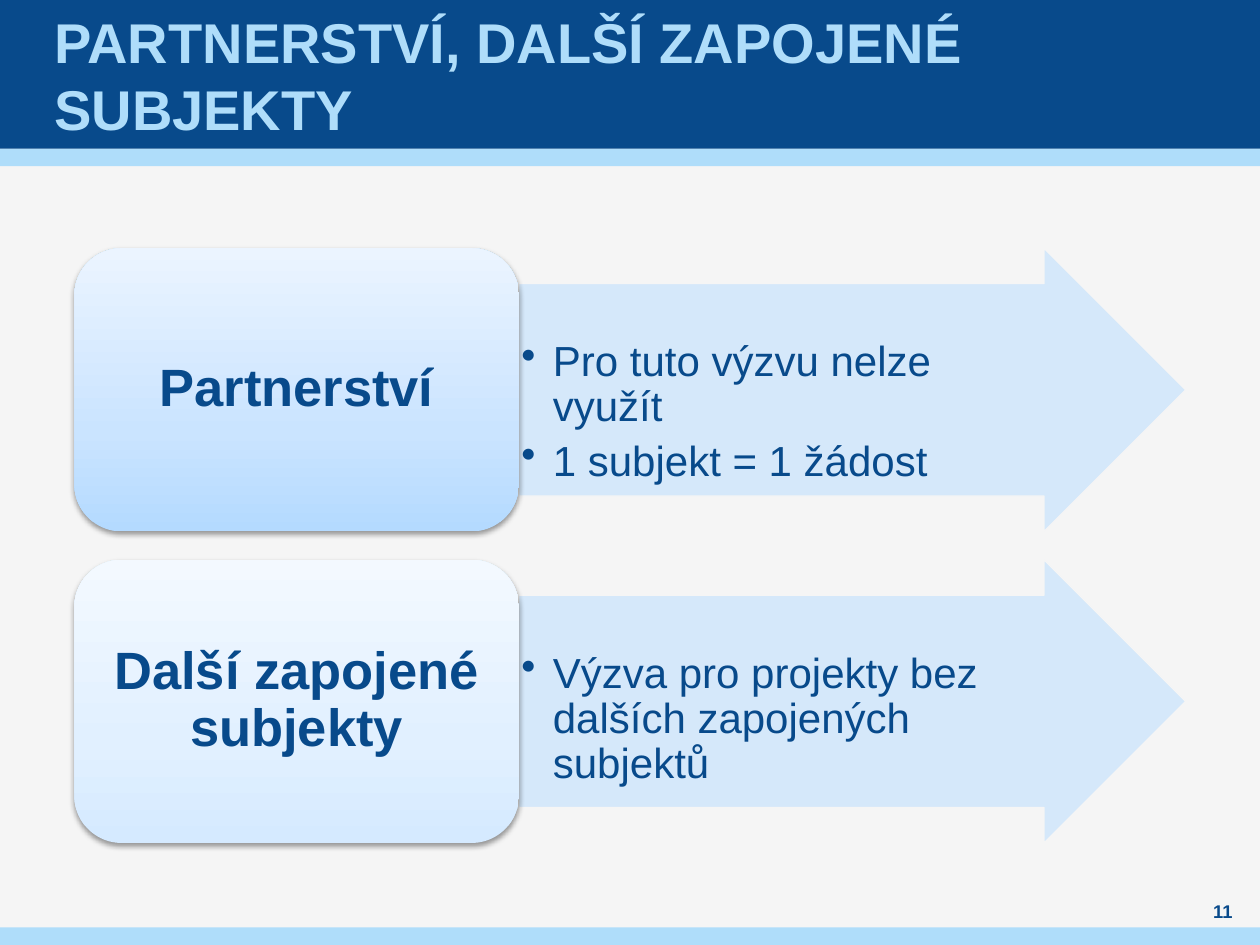
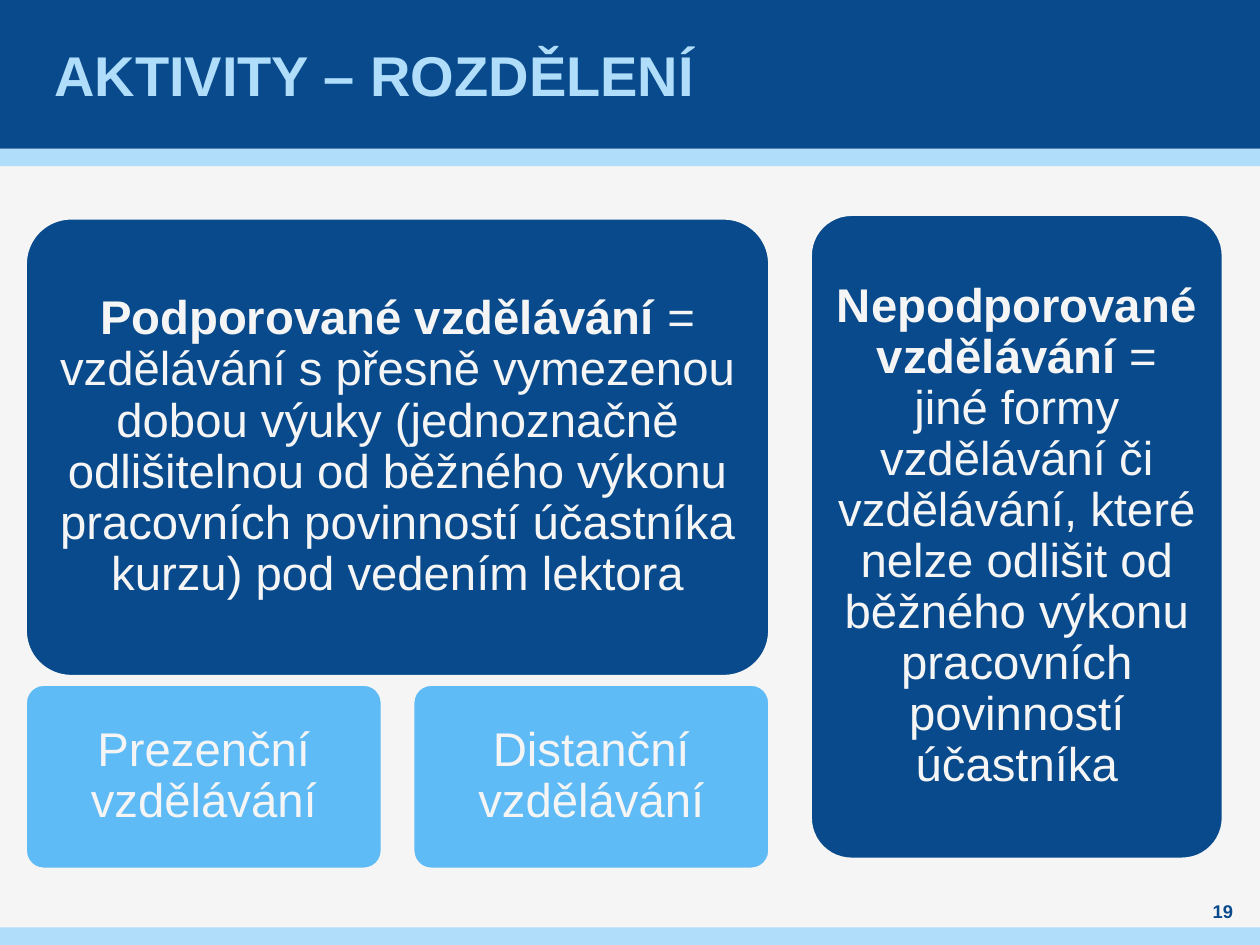
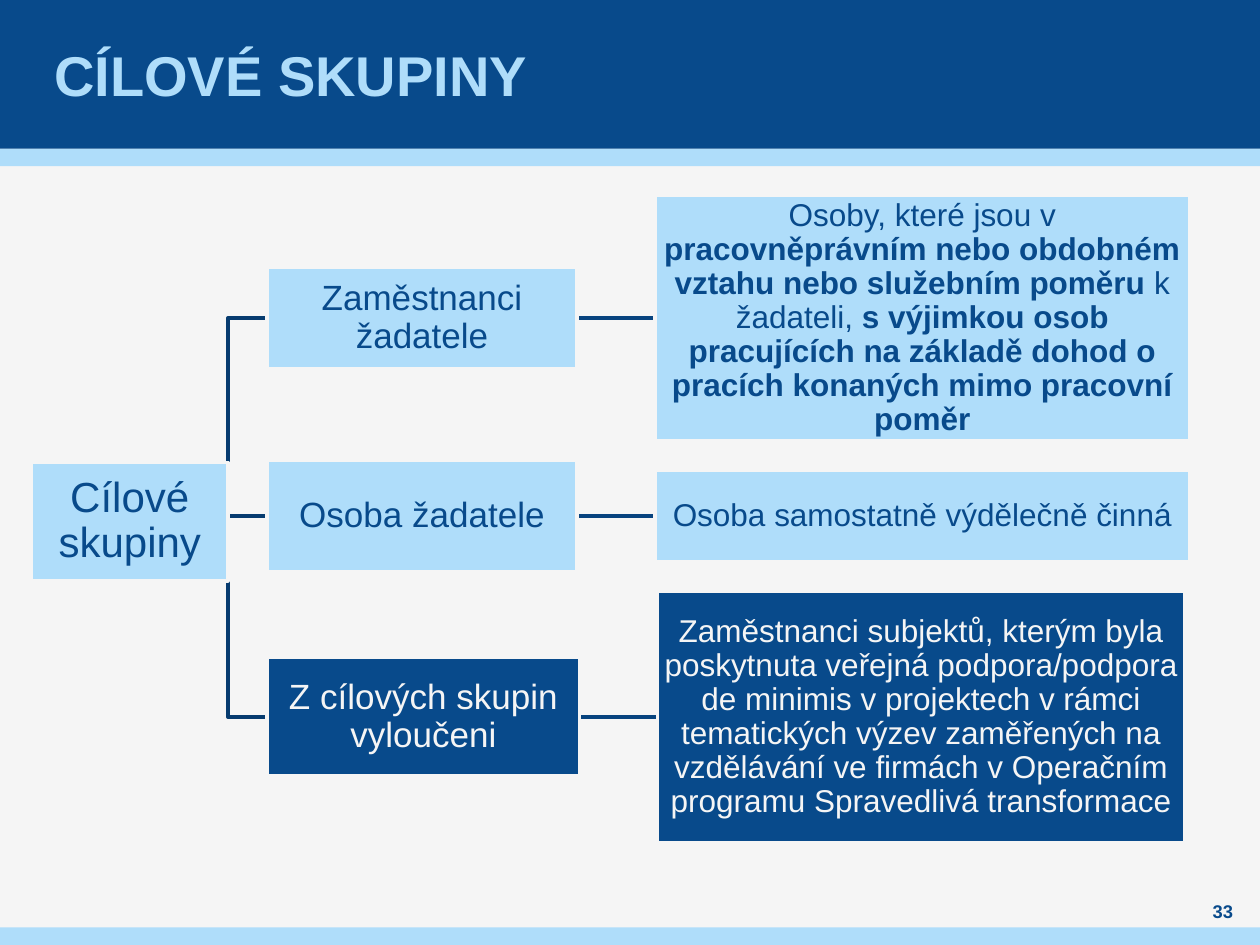
from copy import deepcopy

from lxml.etree import SubElement
from pptx import Presentation
from pptx.dml.color import RGBColor
from pptx.enum.shapes import MSO_CONNECTOR as LINK, MSO_SHAPE as KIND
from pptx.enum.text import MSO_ANCHOR as ANCHOR, PP_ALIGN as ALIGN
from pptx.oxml.ns import qn
from pptx.util import Inches, Pt

FONT = "Arial"
NAVY, SKY, BLUE, PALE, ICE = "084A8B", "AFDDFA", "5FBBF5", "F5F5F5", "D2E7FB"
STEM, TWIG = "063B6F", "07437E"
COLS, ROWS = 100, 75  # grid of the slide, one cell is a tenth of an inch
HEAD, STRIPE = 11.8, 1.4


def grid(*cells):
    return [Inches(n / 10) for n in cells]


def rgb(code):
    return RGBColor.from_string(code)


def shape(slide, kind, box, fill=None, edge=None, width=2, adj=()):
    item = slide.shapes.add_shape(kind, *grid(*box))
    item.shadow.inherit = False
    for i, value in enumerate(adj):
        item.adjustments[i] = value
    if fill:
        item.fill.solid()
        item.fill.fore_color.rgb = rgb(fill)
    if edge:
        item.line.color.rgb = rgb(edge)
        item.line.width = Pt(width)
    else:
        item.line.fill.background()
    return item


def write(item, lines, size, color, pads, bold=False, align=ALIGN.CENTER,
          anchor=ANCHOR.MIDDLE, lead=0.9, after=0):
    """Fill a shape with paragraphs; words between asterisks are bold."""
    frame = item.text_frame
    frame.word_wrap = True
    frame.vertical_anchor = anchor
    (frame.margin_left, frame.margin_top,
     frame.margin_right, frame.margin_bottom) = grid(*pads)
    frame.text = "\n".join(lines)
    for para in frame.paragraphs:
        parts = para.text.split("*")
        para.text = ""
        para.alignment = align
        para.line_spacing = lead
        para.space_after = Pt(after)
        for i, part in enumerate(parts):
            if part:
                run = para.add_run()
                run.text = part
                run.font.name = FONT
                run.font.size = Pt(size)
                run.font.bold = bold or i % 2 == 1
                run.font.color.rgb = rgb(color)


def bullets(item, indent):
    for para in item.text_frame.paragraphs:
        props = para._p.get_or_add_pPr()
        props.set("marL", str(indent))
        props.set("indent", str(-indent))
        SubElement(props, qn("a:buChar")).set("char", "•")


def fade(item, colors):
    """Gradient that runs from the bottom edge to the top edge."""
    item.fill.gradient()
    item.fill.gradient_angle = 90
    stops = item._element.spPr.find(".//" + qn("a:gsLst"))
    stops.append(deepcopy(stops[0]))
    for stop, place, code in zip(item.fill.gradient_stops, (0, 0.35, 1), colors):
        stop.position = place
        stop.color.rgb = rgb(code)


def clear(parent, share):
    SubElement(parent, qn("a:alpha")).set("val", str(share * 1000))


def shade(item):
    effects = item._element.spPr.find(qn("a:effectLst"))
    drop = SubElement(effects, qn("a:outerShdw"), blurRad=str(Pt(3.1)),
                      dist=str(Pt(1.6)), dir="5400000", rotWithShape="0")
    clear(SubElement(drop, qn("a:srgbClr"), val="000000"), 38)


def link(slide, kind, start, end, color):
    line = slide.shapes.add_connector(kind, *grid(*start, *end))
    line.line.color.rgb = rgb(color)
    line.line.width = Pt(2)
    SubElement(line._element.spPr, qn("a:effectLst"))


def page(deck, title, number):
    """Add a slide with background, bands, title and page number."""
    slide = deck.slides.add_slide(deck.slide_layouts[6])
    back = slide.background.fill
    back.solid()
    back.fore_color.rgb = rgb(PALE)
    for top, high, fill in ((HEAD, STRIPE, SKY), (0, HEAD, NAVY),
                            (ROWS - STRIPE, STRIPE, SKY)):
        shape(slide, KIND.RECTANGLE, (0, top, COLS, high), fill)
    head = slide.shapes.add_textbox(*grid(3.9, 0, 92.1, HEAD))
    write(head, [title], 32, SKY, (0.4, 0, 0.4, 0), True, ALIGN.LEFT, lead=1)
    foot = slide.shapes.add_textbox(*grid(94.5, 71.3, 5.1, 2))
    write(foot, [str(number)], 10.5, NAVY, (0, 0, 0, 0), True, lead=1)
    return slide


def topic(slide, box, name, points, colors):
    """A rounded card followed by an arrow with bullet points."""
    x, y, w, h = box
    card = 0.4 * w
    arrow = shape(slide, KIND.RIGHT_ARROW, (x + card, y, w - card, h),
                  ICE, PALE, 0.75, (0.75, 0.5))
    clear(arrow._element.spPr.find(qn("a:solidFill"))[0], 90)
    write(arrow, points, 24, NAVY, (0.2, 4.5, 5.8, 0.2), align=ALIGN.LEFT,
          anchor=ANCHOR.TOP, after=5)
    bullets(arrow, Inches(0.25))
    tile = shape(slide, KIND.ROUNDED_RECTANGLE, (x, y, card, h))
    fade(tile, colors)
    shade(tile)
    write(tile, [name], 30, NAVY, (1.2, 0.6, 1.2, 0.6), True)


def topics(slide, box, rows):
    x, y, w, h = box
    high = h / (1.1 * len(rows) - 0.1)
    for i, row in enumerate(rows):
        topic(slide, (x, y + 1.1 * high * i, w, high), *row)


def tile(slide, box, text, fill):
    item = shape(slide, KIND.ROUNDED_RECTANGLE, box, fill, PALE, adj=(0.1,))
    write(item, [text], 27, PALE, (1.1,) * 4)


def split(slide, box, main, kinds, other):
    """A wide tile over its kinds, with a tall tile at the right."""
    x, y, w, h = box
    wide, gap, tall = 59.1, 2.4, 32.8
    tile(slide, (x, y + 0.3, wide, 36.4), main, NAVY)
    each = (wide + gap) / len(kinds) - gap
    for i, kind in enumerate(kinds):
        tile(slide, (x + i * (each + gap), y + h - 14.7, each, 14.7), kind, BLUE)
    tile(slide, (x + w - tall, y, tall, 51.2), other, NAVY)


def node(slide, box, text, size, fill, pad=0.1):
    item = shape(slide, KIND.RECTANGLE, box, fill, PALE)
    write(item, [text], size, PALE if fill == NAVY else NAVY, (pad,) * 4)


def tree(slide, box, root, rows):
    """A root, its branches and one leaf for each branch."""
    x, y, w, h = box
    trunk, gap, space, mid = 15.6, 6.2, 2.35, y + h / 2
    start = x + trunk - gap / 2
    left, top = x + trunk + gap / 2, y
    boxes = []
    for name, text, fill, wide, low, leaf, high in rows:
        axis, end = top + high / 2, left + wide
        link(slide, LINK.ELBOW, (start, mid), (left, axis), STEM)
        link(slide, LINK.STRAIGHT, (end, axis), (end + gap, axis), TWIG)
        boxes += [((left, axis - low / 2, wide, low), name, 20, fill),
                  ((end + gap, top, leaf, high), text, 18, fill)]
        top += high + space
    node(slide, (x, mid - 4.7, trunk, 9.4), root, 24, SKY, 0.2)
    for item in boxes:
        node(slide, *item)


def main():
    deck = Presentation()
    deck.slide_width, deck.slide_height = grid(COLS, ROWS)

    slide = page(deck, "PARTNERSTVÍ, DALŠÍ ZAPOJENÉ SUBJEKTY", 11)
    topics(slide, (5.9, 19.7, 88.2, 47.2), [
        ("Partnerství", ["Pro tuto výzvu nelze využít", "1 subjekt = 1 žádost"],
         ("B4DAFF", "CAE4FF", "EBF4FF")),
        ("Další zapojené subjekty",
         ["Výzva pro projekty bez dalších zapojených subjektů"],
         ("D5EAFF", "E1F0FF", "F3F9FF")),
    ])

    slide = page(deck, "AKTIVITY – ROZDĚLENÍ", 19)
    split(slide, (2, 17, 95.1, 52),
          "*Podporované vzdělávání *= vzdělávání s přesně vymezenou dobou výuky "
          "(jednoznačně odlišitelnou od běžného výkonu pracovních povinností "
          "účastníka kurzu) pod vedením lektora",
          ["Prezenční vzdělávání", "Distanční vzdělávání"],
          "*Nepodporované vzdělávání *= jiné formy vzdělávání či vzdělávání, "
          "které nelze odlišit od běžného výkonu pracovních povinností účastníka")

    slide = page(deck, "CÍLOVÉ SKUPINY", 33)
    tree(slide, (2.5, 15.5, 91.9, 51.8), "Cílové skupiny", [
        ("Zaměstnanci žadatele",
         "Osoby, které jsou v *pracovněprávním nebo obdobném vztahu nebo "
         "služebním poměru* k žadateli, *s výjimkou osob pracujících na "
         "základě dohod o pracích konaných mimo pracovní poměr*",
         SKY, 24.6, 8.1, 42.4, 19.5),
        ("Osoba žadatele", "Osoba samostatně výdělečně činná",
         SKY, 24.6, 8.9, 42.4, 7.2),
        ("Z cílových skupin vyloučeni",
         "Zaměstnanci subjektů, kterým byla poskytnuta veřejná podpora/podpora "
         "de minimis v projektech v rámci tematických výzev zaměřených na "
         "vzdělávání ve firmách v Operačním programu Spravedlivá transformace",
         NAVY, 24.8, 9.4, 41.8, 20),
    ])
    deck.save("out.pptx")


if __name__ == "__main__":
    main()
